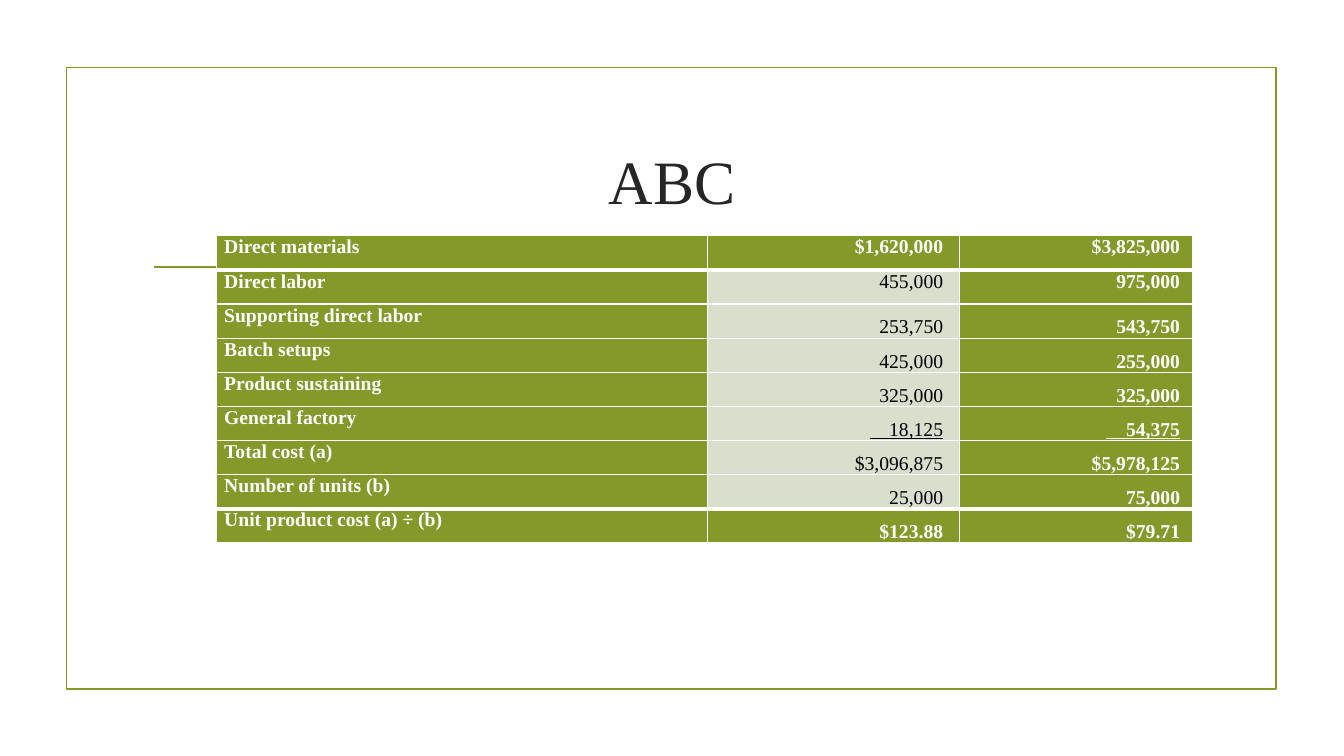
"""Build a slide with an activity-based costing table."""
from lxml.etree import SubElement
from pptx import Presentation
from pptx.dml.color import RGBColor
from pptx.enum.shapes import MSO_CONNECTOR, MSO_SHAPE
from pptx.enum.text import MSO_ANCHOR, PP_ALIGN
from pptx.oxml.ns import qn
from pptx.util import Cm, Pt

TITLE = "ABC"
COSTS = [
    ("Direct materials", "$1,620,000", "$3,825,000"),
    ("Direct labor", "455,000", "975,000"),
    ("Supporting direct labor", "253,750", "543,750"),
    ("Batch setups", "425,000", "255,000"),
    ("Product sustaining", "325,000", "325,000"),
    ("General factory", "    18,125", "    54,375"),
    ("Total cost (a)", "$3,096,875", "$5,978,125"),
    ("Number of units (b)", "25,000", "75,000"),
    ("Unit product cost (a) ÷ (b)", "$123.88", "$79.71"),
]
UNDERLINED_ROW = "General factory"
FONT = "Times New Roman"
GREEN = RGBColor(0x83, 0x99, 0x2A)
PALE = RGBColor(0xD9, 0xDE, 0xCD)
WHITE = RGBColor(0xFF, 0xFF, 0xFF)
BLACK = RGBColor(0x00, 0x00, 0x00)
DARK = RGBColor(0x26, 0x26, 0x26)

COLUMN_WIDTHS = (Cm(12.37), Cm(6.35), Cm(5.87))
RIGHT_MARGINS = (Cm(0.18), Cm(0.41), Cm(0.31))
ROW_HEIGHT = Cm(0.86)
LAST_ROW = len(COSTS) - 1


def set_format(target, values):
    """Set each named attribute of the target."""
    for name, value in values.items():
        setattr(target, name, value)


def set_font(font, color, **values):
    """Set the typeface, colour and other font values."""
    set_format(font, {"name": FONT, **values})
    font.color.rgb = color


def set_borders(cell, row):
    """Draw white cell borders, heavier below the first row and above the last."""
    top = 3 if row in (1, LAST_ROW) else 1
    bottom = 3 if row in (0, LAST_ROW - 1) else 1
    properties = cell._tc.get_or_add_tcPr()
    for side, points in (("L", 1), ("R", 1), ("T", top), ("B", bottom)):
        border = SubElement(properties, qn(f"a:ln{side}"), w=str(Pt(points)))
        fill = SubElement(border, qn("a:solidFill"))
        SubElement(fill, qn("a:srgbClr"), val=str(WHITE))


def fill_cell(cell, row, column, text):
    """Write and format one table cell."""
    is_plain = column == 1 and 0 < row < LAST_ROW
    is_low = column > 0 and row > 1
    set_borders(cell, row)
    cell.fill.solid()
    cell.fill.fore_color.rgb = PALE if is_plain else GREEN
    set_format(cell, {
        "text": text,
        "margin_left": Cm(0.19),
        "margin_right": RIGHT_MARGINS[column],
        "margin_top": 0,
        "margin_bottom": 0,
        "vertical_anchor": MSO_ANCHOR.BOTTOM if is_low else MSO_ANCHOR.TOP,
    })
    paragraph = cell.text_frame.paragraphs[0]
    set_format(paragraph, {
        "alignment": PP_ALIGN.RIGHT if column else PP_ALIGN.LEFT,
        "line_spacing": Pt(16),
    })
    set_font(paragraph.runs[0].font, BLACK if is_plain else WHITE, size=Pt(14),
             bold=not is_plain,
             underline=column > 0 and COSTS[row][0] == UNDERLINED_ROW)


def add_decoration(slide):
    """Add the green frame and the rule under the title."""
    frame = slide.shapes.add_shape(
        MSO_SHAPE.RECTANGLE, Cm(1.68), Cm(1.7), Cm(30.48), Cm(15.67))
    frame.shadow.inherit = False
    frame.fill.background()
    rule = slide.shapes.add_connector(
        MSO_CONNECTOR.STRAIGHT, Cm(3.89), Cm(6.73), Cm(30), Cm(6.73))
    SubElement(rule._element.spPr, qn("a:effectLst"))
    for shape in (frame, rule):
        shape.line.color.rgb = GREEN
        shape.line.width = Pt(1.25)


def add_title(slide):
    """Place and format the title."""
    title = slide.shapes.title
    set_format(title, {"left": Cm(3.61), "top": Cm(2.72),
                       "width": Cm(26.67), "height": Cm(3.63)})
    set_format(title.text_frame, {"text": TITLE, "word_wrap": True,
                                  "vertical_anchor": MSO_ANCHOR.MIDDLE})
    paragraph = title.text_frame.paragraphs[0]
    paragraph.alignment = PP_ALIGN.CENTER
    set_font(paragraph.runs[0].font, DARK, size=Pt(44))


def add_cost_table(slide):
    """Add the cost table."""
    table = slide.shapes.add_table(
        len(COSTS), len(COLUMN_WIDTHS), Cm(5.46), Cm(5.94),
        sum(COLUMN_WIDTHS), ROW_HEIGHT * len(COSTS)).table
    set_format(table, {"first_row": False, "horz_banding": False})
    for column, width in zip(table.columns, COLUMN_WIDTHS):
        column.width = width
    for row, texts in enumerate(COSTS):
        table.rows[row].height = ROW_HEIGHT
        for column, text in enumerate(texts):
            fill_cell(table.cell(row, column), row, column, text)


def main():
    """Create and save the presentation."""
    presentation = Presentation()
    set_format(presentation, {"slide_width": Cm(33.87), "slide_height": Cm(19.05)})
    slide = presentation.slides.add_slide(presentation.slide_layouts[5])
    add_decoration(slide)
    add_title(slide)
    add_cost_table(slide)
    presentation.save("out.pptx")


if __name__ == "__main__":
    main()
